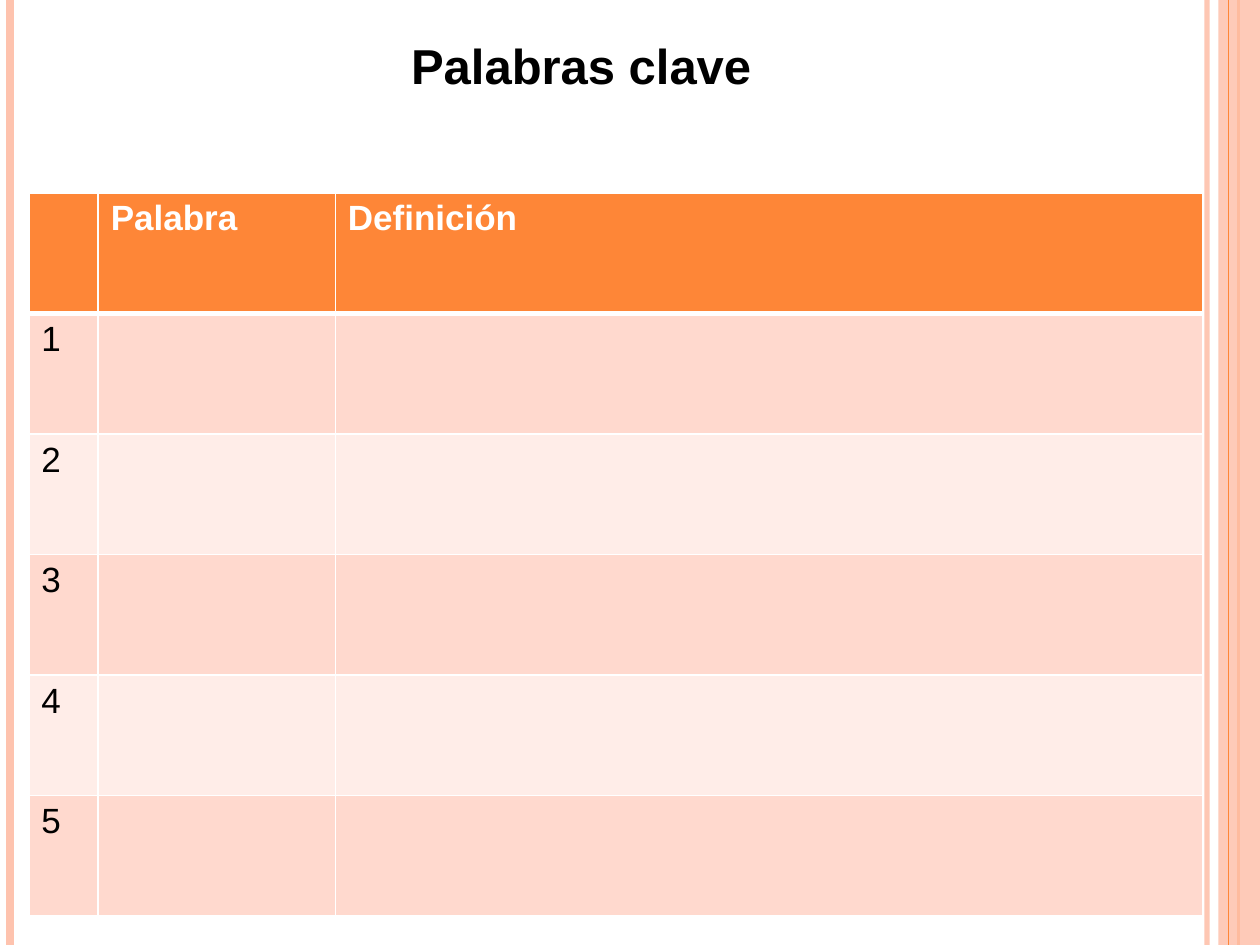
"""Build the key words slide: a titled vocabulary table between striped margins."""
from lxml import etree
from pptx import Presentation
from pptx.dml.color import RGBColor
from pptx.enum.shapes import MSO_CONNECTOR, MSO_SHAPE
from pptx.enum.text import MSO_ANCHOR, MSO_AUTO_SIZE, PP_ALIGN
from pptx.oxml.ns import qn
from pptx.util import Cm, Pt

STRAIGHT = MSO_CONNECTOR.STRAIGHT
RECTANGLE = MSO_SHAPE.RECTANGLE
MIDDLE = MSO_ANCHOR.MIDDLE
NO_AUTOFIT = MSO_AUTO_SIZE.NONE
LEFT, CENTER = PP_ALIGN.LEFT, PP_ALIGN.CENTER

THEME = {
    "font": "Arial", "title": 28, "body": 20,
    "black": "000000", "white": "FFFFFF", "orange": "FE8637",
    "peach": "FEC3AE", "band_dark": "FFD9CE", "band_light": "FFEDE8",
}


def rgb(name):
    return RGBColor.from_string(THEME[name])


def write(tf, text, size="body", color="black", bold=False, align=LEFT):
    p = tf.paragraphs[0]
    p.alignment = align
    r = p.add_run()
    r.text = text
    r.font.name = THEME["font"]
    r.font.size = Pt(THEME[size])
    r.font.bold = bold
    r.font.color.rgb = rgb(color)


prs = Presentation()
prs.slide_width, prs.slide_height = Cm(25.4), Cm(19.05)
s = prs.slides.add_slide(prs.slide_layouts[5])

stripes = [
    (24.33, "peach", 3, 93),
    (0.21, "peach", 4.5, 100),
    (24.97, "orange", 1.5, 100),
    (24.56, "peach", None, 87),
    (24.77, "orange", 0.75, 100),
]
for x, color, weight, opacity in stripes:
    if weight is None:
        sp = s.shapes.add_shape(RECTANGLE, Cm(x), 0, Cm(25.4 - x), prs.slide_height)
        sp.shadow.inherit = False
        sp.line.fill.background()
        fill = sp.fill
        fill.solid()
    else:
        sp = s.shapes.add_connector(STRAIGHT, Cm(x), 0, Cm(x), prs.slide_height)
        sp.line.width = Pt(weight)
        fill = sp.line.fill
        fill.solid()
        etree.SubElement(sp.element.spPr, qn("a:effectLst"))
    fill.fore_color.rgb = rgb(color)
    if opacity < 100:
        clr = next(sp.element.spPr.iter(qn("a:srgbClr")))
        etree.SubElement(clr, qn("a:alpha"), val=str(opacity * 1000))

title = s.shapes.title
title.left, title.top, title.width, title.height = Cm(3.18), Cm(0.58), Cm(17.07), Cm(1.45)
tf = title.text_frame
tf.word_wrap = True
tf.auto_size = NO_AUTOFIT
tf.vertical_anchor = MIDDLE
write(tf, "Palabras clave", size="title", bold=True, align=CENTER)

rows = [["", "Palabra", "Definición"]] + [[str(n), "", ""] for n in range(1, 6)]
widths = [1.4, 4.78, 17.48]
row_height = 2.43
table = s.shapes.add_table(len(rows), len(widths), Cm(0.58), Cm(3.89),
                           Cm(sum(widths)), Cm(row_height * len(rows))).table
for col, width in zip(table.columns, widths):
    col.width = Cm(width)
for i, texts in enumerate(rows):
    table.rows[i].height = Cm(row_height)
    header = i == 0
    band = "orange" if header else "band_dark" if i % 2 else "band_light"
    for j, text in enumerate(texts):
        cell = table.cell(i, j)
        tcPr = cell._tc.get_or_add_tcPr()
        for side in "LRTB":
            thick = (i, side) in ((0, "B"), (1, "T"))
            ln = etree.SubElement(tcPr, qn(f"a:ln{side}"), w=str(Pt(3 if thick else 1)))
            solid = etree.SubElement(ln, qn("a:solidFill"))
            etree.SubElement(solid, qn("a:srgbClr"), val=THEME["white"])
        cell.fill.solid()
        cell.fill.fore_color.rgb = rgb(band)
        if text:
            write(cell.text_frame, text, color="white" if header else "black", bold=header)

prs.save("out.pptx")
